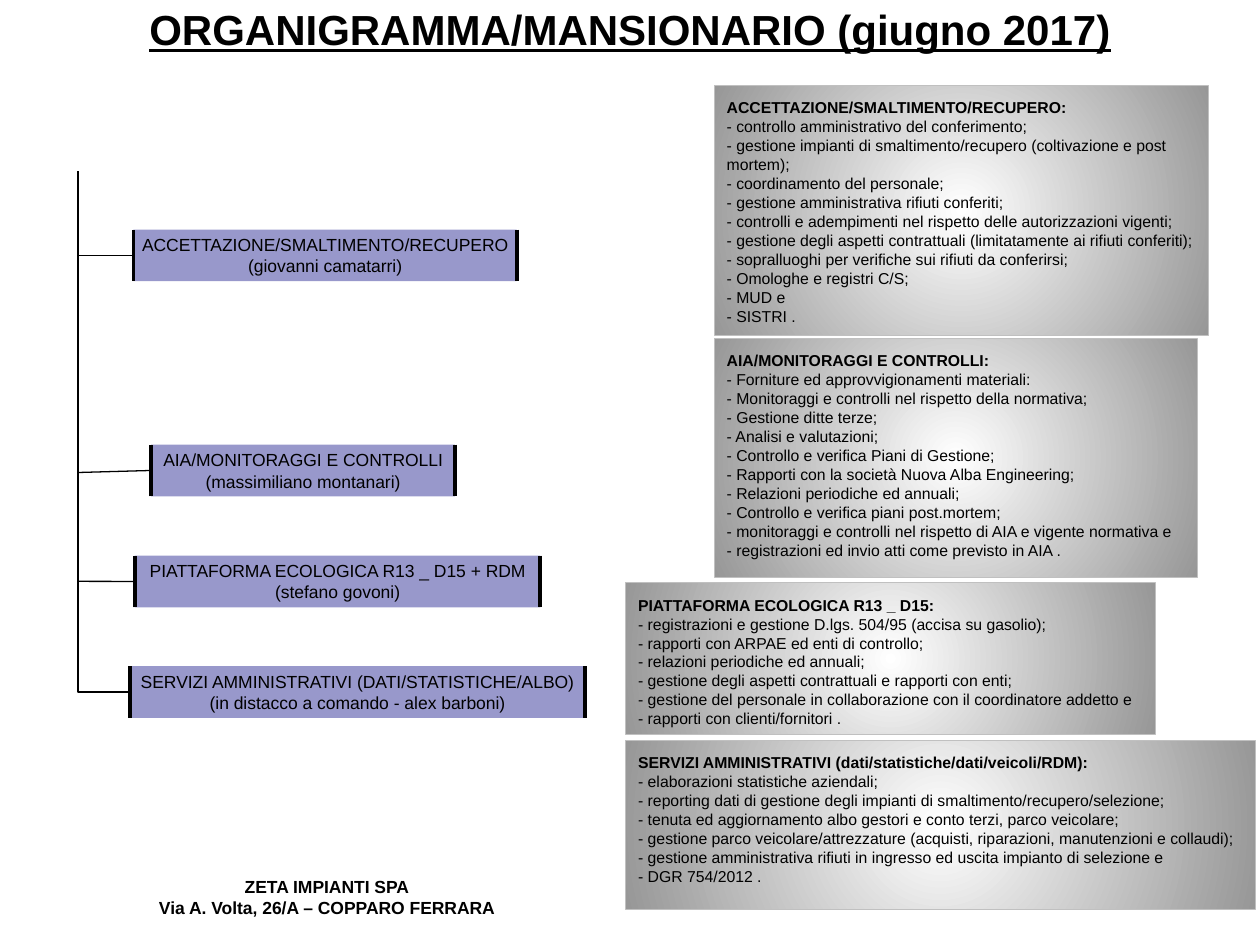
from lxml import etree
from pptx import Presentation
from pptx.dml.color import RGBColor
from pptx.enum.shapes import MSO_CONNECTOR as CONN, MSO_SHAPE as SHAPE
from pptx.enum.text import MSO_ANCHOR as ANCHOR, PP_ALIGN as ALIGN
from pptx.oxml import parse_xml
from pptx.oxml.ns import nsdecls, qn
from pptx.util import Pt

BLACK = RGBColor(0x00, 0x00, 0x00)
SILVER = RGBColor(0xC0, 0xC0, 0xC0)
GRAY = RGBColor(0x97, 0x97, 0x97)
WHITE = RGBColor(0xFF, 0xFF, 0xFF)
INDIGO = RGBColor(0x33, 0x33, 0x99)

TRUNK_X, TRUNK_TOP = 44.6, 97.9
ROLE_H = 29.5

# Roles: text lines, left, top, width, y where the branch meets the trunk, elbow
ROLES = [
    (["ACCETTAZIONE/SMALTIMENTO/RECUPERO", "(giovanni camatarri)"],
     76.3, 131.2, 218.9, 146, True),
    (["AIA/MONITORAGGI E CONTROLLI", "(massimiliano montanari)"],
     86.4, 254.1, 173.5, 270, False),
    (["PIATTAFORMA ECOLOGICA R13 _ D15 + RDM", "(stefano govoni)"],
     77, 317.5, 231.8, 332.2, False),
    (["SERVIZI AMMINISTRATIVI (DATI/STATISTICHE/ALBO)",
      "(in distacco a comando - alex barboni)"],
     74.2, 380.7, 260, 395.4, True),
]

# Duties: left, top, width, height, heading, items
DUTIES = [
    (408.2, 48.8, 282.4, 142.7, "ACCETTAZIONE/SMALTIMENTO/RECUPERO:", [
        "controllo amministrativo del conferimento;",
        "gestione impianti di smaltimento/recupero (coltivazione e post mortem);",
        "coordinamento del personale;",
        "gestione amministrativa rifiuti conferiti;",
        "controlli e adempimenti nel rispetto delle autorizzazioni vigenti;",
        "gestione degli aspetti contrattuali (limitatamente ai rifiuti conferiti);",
        "sopralluoghi per verifiche sui rifiuti da conferirsi;",
        "Omologhe e registri C/S;",
        "MUD e",
        "SISTRI .",
    ]),
    (408.2, 193.3, 276, 136.5, "AIA/MONITORAGGI E CONTROLLI:", [
        "Forniture ed approvvigionamenti materiali:",
        "Monitoraggi e controlli nel rispetto della normativa;",
        "Gestione ditte terze;",
        "Analisi e valutazioni;",
        "Controllo e verifica Piani di Gestione;",
        "Rapporti con la società Nuova Alba Engineering;",
        "Relazioni periodiche ed annuali;",
        "Controllo e verifica piani post.mortem;",
        "monitoraggi e controlli nel rispetto di AIA e vigente normativa e",
        "registrazioni ed invio atti come previsto in AIA .",
    ]),
    (357.6, 333, 302.8, 86.6, "PIATTAFORMA ECOLOGICA R13 _ D15:", [
        "registrazioni e gestione D.lgs. 504/95 (accisa su gasolio);",
        "rapporti con ARPAE ed enti di controllo;",
        "relazioni periodiche ed annuali;",
        "gestione degli aspetti contrattuali e rapporti con enti;",
        "gestione del personale in collaborazione con il coordinatore addetto e",
        "rapporti con clienti/fornitori .",
    ]),
    (357.6, 423, 359.6, 97,
     "SERVIZI AMMINISTRATIVI (dati/statistiche/dati/veicoli/RDM):", [
         "elaborazioni statistiche aziendali;",
         "reporting dati di gestione degli impianti di smaltimento/recupero/selezione;",
         "tenuta ed aggiornamento albo gestori e conto terzi, parco veicolare;",
         "gestione parco veicolare/attrezzature (acquisti, riparazioni, manutenzioni e collaudi);",
         "gestione amministrativa rifiuti in ingresso ed uscita impianto di selezione e",
         "DGR 754/2012 .",
     ]),
]


class OrgChart:
    def __init__(self, s, font="Arial"):
        self.s = s
        self.font = font

    def add_text(self, tf, lines, align, frame, **fmt):
        """Fill a text frame; each line is a (text, bold) pair."""
        for name, value in frame.items():
            setattr(tf, name, value)
        for i, (text, bold) in enumerate(lines):
            p = tf.paragraphs[0] if i == 0 else tf.add_paragraph()
            p.alignment = align
            r = p.add_run()
            r.text = text
            for name, value in {"name": self.font, "bold": bold, **fmt}.items():
                setattr(r.font, name, value)
            r.font.color.rgb = BLACK

    def label(self, box, lines, anchor=ANCHOR.TOP, **fmt):
        sp = self.s.shapes.add_textbox(*map(Pt, box))
        frame = {"word_wrap": True, "vertical_anchor": anchor}
        self.add_text(sp.text_frame, [(t, True) for t in lines], ALIGN.CENTER, frame, **fmt)

    def shape(self, kind, box, line_color, line_width):
        sp = self.s.shapes.add_shape(kind, *map(Pt, box))
        sp.shadow.inherit = False
        sp.line.color.rgb = line_color
        sp.line.width = Pt(line_width)
        return sp

    def role(self, box, lines):
        sp = self.shape(SHAPE.DOUBLE_BRACKET, box, BLACK, 2.25)
        sp.adjustments[0] = 0
        sp.fill.solid()
        sp.fill.fore_color.rgb = INDIGO
        color = sp._element.spPr.find(qn("a:solidFill"))[0]
        etree.SubElement(color, qn("a:alpha"), val="50000")
        frame = {"word_wrap": False, "vertical_anchor": ANCHOR.MIDDLE,
                 "margin_left": Pt(2.9), "margin_right": Pt(2.9),
                 "margin_top": Pt(1.4), "margin_bottom": Pt(1.4)}
        self.add_text(sp.text_frame, [(t, False) for t in lines], ALIGN.CENTER, frame,
                      size=Pt(10))

    def duties(self, box, heading, items):
        sp = self.shape(SHAPE.RECTANGLE, box, SILVER, 0.5)
        sp.fill.gradient()
        grad = sp._element.spPr.find(qn("a:gradFill"))
        radial = parse_xml(
            f'<a:gradFill {nsdecls("a")} rotWithShape="1"><a:gsLst>'
            f'<a:gs pos="0"><a:srgbClr val="{WHITE}"/></a:gs>'
            f'<a:gs pos="100000"><a:srgbClr val="{GRAY}"/></a:gs></a:gsLst>'
            '<a:path path="circle"><a:fillToRect l="50000" t="50000" r="50000" b="50000"/>'
            '</a:path></a:gradFill>')
        sp._element.spPr.replace(grad, radial)
        sides = ("left", "right", "top", "bottom")
        frame = {"word_wrap": True, "vertical_anchor": ANCHOR.TOP,
                 **{f"margin_{side}": Pt(7.2) for side in sides}}
        lines = [(heading, True)] + [(f"- {item}", False) for item in items]
        self.add_text(sp.text_frame, lines, ALIGN.LEFT, frame, size=Pt(9))

    def connector(self, kind, *ends):
        c = self.s.shapes.add_connector(kind, *map(Pt, ends))
        c.line.color.rgb = BLACK
        c.line.width = Pt(0.75)
        etree.SubElement(c._element.spPr, qn("a:effectLst"))
        return c

    def elbow(self, x, y):
        """Run from a role left to the trunk, then up to its top."""
        c = self.connector(CONN.ELBOW, TRUNK_X, TRUNK_TOP, x, y)
        c._element.spPr.find(qn("a:prstGeom")).set("prst", "bentConnector2")
        c._element.spPr.find(qn("a:xfrm")).set("rot", "10800000")


def main():
    prs = Presentation()
    prs.slide_width, prs.slide_height = Pt(720), Pt(540)
    chart = OrgChart(prs.slides.add_slide(prs.slide_layouts[6]))

    # Title and company address
    chart.label((36, 21.6, 648, 13), ["ORGANIGRAMMA/MANSIONARIO (giugno 2017)"],
                ANCHOR.BOTTOM, size=Pt(24), underline=True)
    chart.label((72.7, 496.8, 228.2, 31),
                ["ZETA IMPIANTI SPA", "Via A. Volta, 26/A – COPPARO FERRARA"], size=Pt(10))

    # Roles hanging from the trunk
    for lines, left, top, width, branch_y, bent in ROLES:
        if bent:
            chart.elbow(left, branch_y)
        else:
            chart.connector(CONN.STRAIGHT, left, top + ROLE_H / 2, TRUNK_X, branch_y)
        chart.role((left, top, width, ROLE_H), lines)

    # Duties of each role
    for *box, heading, items in DUTIES:
        chart.duties(box, heading, items)

    prs.save("out.pptx")


if __name__ == "__main__":
    main()
